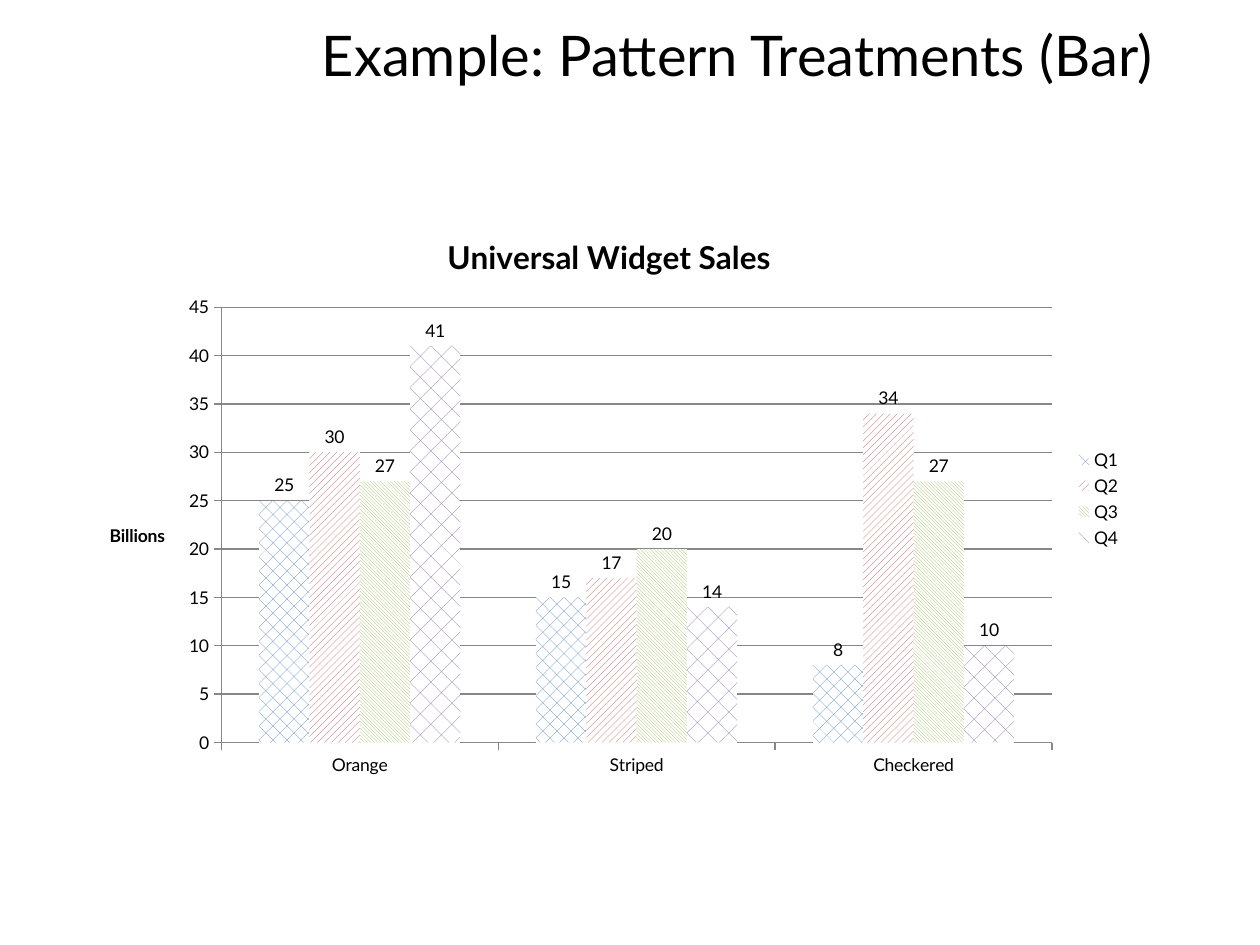
from pptx import Presentation
from pptx.chart.data import CategoryChartData
from pptx.dml.color import RGBColor
from pptx.enum.chart import XL_CHART_TYPE as ChartType, XL_LABEL_POSITION as LabelPosition
from pptx.enum.chart import XL_LEGEND_POSITION as LegendPosition, XL_TICK_MARK as TickMark
from pptx.enum.dml import MSO_PATTERN as Pattern
from pptx.enum.text import MSO_ANCHOR as Anchor, PP_ALIGN as Align
from pptx.util import Inches, Pt

COLORS = {
    "text": "000000", "paper": "FFFFFF", "axis": "878787",
    "Q1": "4F81BD", "Q2": "C0504D", "Q3": "9BBB59", "Q4": "8064A2",
}
QUARTERS = {
    "Q1": ((25, 15, 8), Pattern.PERCENT_25),
    "Q2": ((30, 17, 34), Pattern.WIDE_UPWARD_DIAGONAL),
    "Q3": ((27, 20, 27), Pattern.DARK_DOWNWARD_DIAGONAL),
    "Q4": ((41, 14, 10), Pattern.DIAGONAL_BRICK),
}


def color(name):
    return RGBColor.from_string(COLORS[name])


def set_font(font, size, bold=False):
    for key, value in {"name": "Lato", "size": Pt(size), "bold": bold}.items():
        setattr(font, key, value)
    font.color.rgb = color("text")


deck = Presentation()
deck.slide_width, deck.slide_height = Inches(10), Inches(7.5)
column, row = deck.slide_width // 120, deck.slide_height // 90
page = deck.slides.add_slide(deck.slide_layouts[5])

title = page.shapes.title
place = {"left": 4 * column, "top": 4 * row, "width": 107 * column, "height": 5 * row}
for key, value in place.items():
    setattr(title, key, value)
frame = title.text_frame
frame.text = "Example: Pattern Treatments (Bar)"
frame.vertical_anchor = Anchor.BOTTOM
frame.paragraphs[0].alignment = Align.RIGHT
set_font(frame.paragraphs[0].runs[0].font, 32)

data = CategoryChartData()
data.categories = ["Orange", "Striped", "Checkered"]
for quarter, (sales, pattern) in QUARTERS.items():
    data.add_series(quarter, sales)
chart = page.shapes.add_chart(
    ChartType.COLUMN_CLUSTERED, 8 * column, 20 * row, 100 * column, 55 * row, data
).chart
set_font(chart.font, 10)

chart.has_title = True
axis_title = chart.value_axis.axis_title
for heading, words, size in (
    (chart.chart_title, "Universal Widget Sales", 18),
    (axis_title, "Billions", 10),
):
    heading.text_frame.text = words
    set_font(heading.text_frame.paragraphs[0].runs[0].font, size, True)
for key, value in {"rot": "0", "vert": "horz"}.items():
    axis_title.text_frame._txBody.bodyPr.set(key, value)

chart.has_legend = True
for key, value in {"position": LegendPosition.RIGHT, "include_in_layout": False}.items():
    setattr(chart.legend, key, value)

chart.value_axis.has_major_gridlines = True
for axis in (chart.category_axis, chart.value_axis):
    axis.major_tick_mark = TickMark.OUTSIDE
    axis.minor_tick_mark = TickMark.NONE
for part in (chart.category_axis, chart.value_axis, chart.value_axis.major_gridlines):
    part.format.line.color.rgb = color("axis")
    part.format.line.width = Pt(0.75)

plot = chart.plots[0]
for key, value in {"gap_width": 150, "overlap": 0, "vary_by_categories": False}.items():
    setattr(plot, key, value)
for series in plot.series:
    fill = series.format.fill
    fill.patterned()
    fill.pattern = QUARTERS[series.name][1]
    fill.fore_color.rgb = color(series.name)
    fill.back_color.rgb = color("paper")
    series.invert_if_negative = False
    labels = series.data_labels
    labels.show_value = True
    labels.position = LabelPosition.OUTSIDE_END
    set_font(labels.font, 10)

deck.save("out.pptx")
